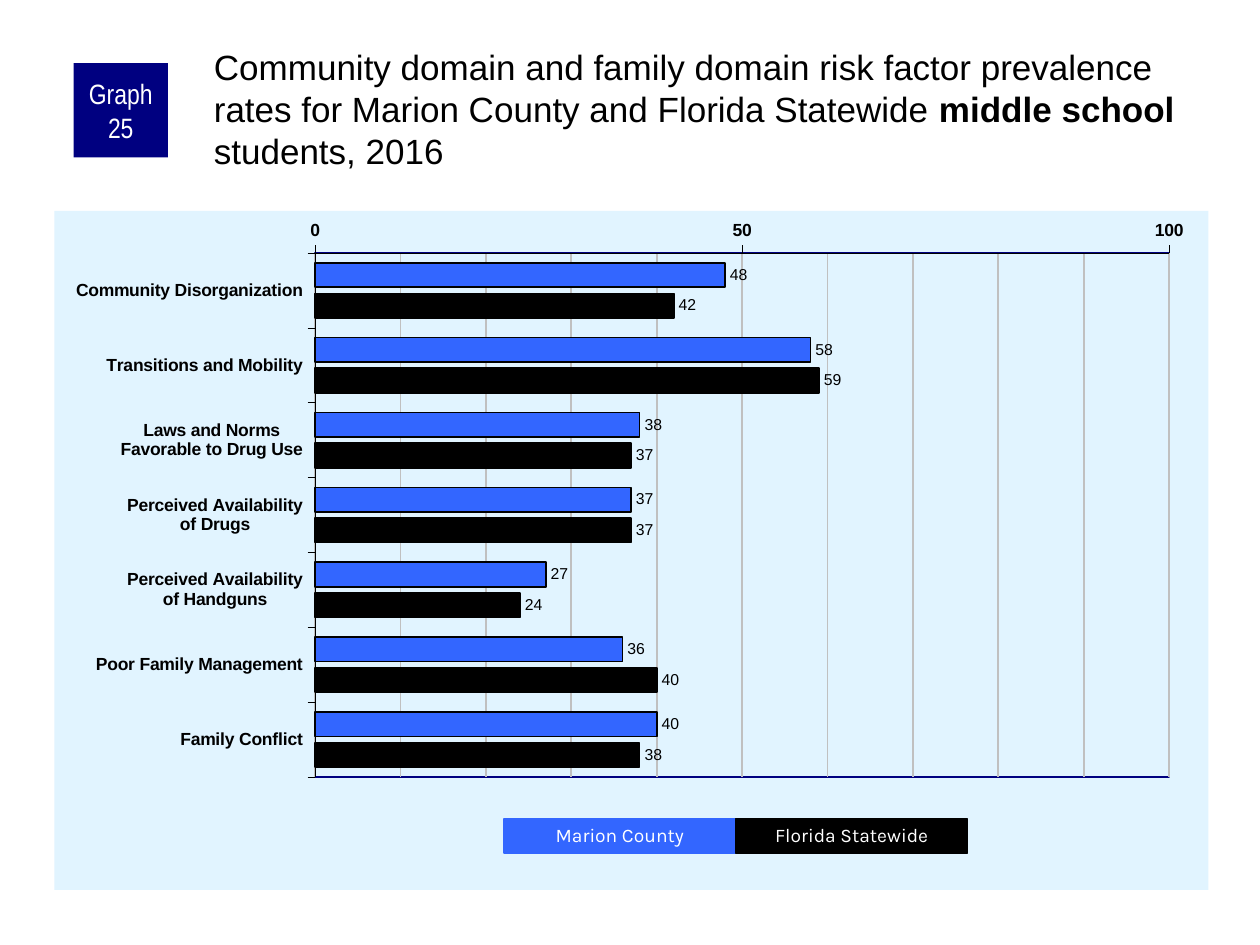
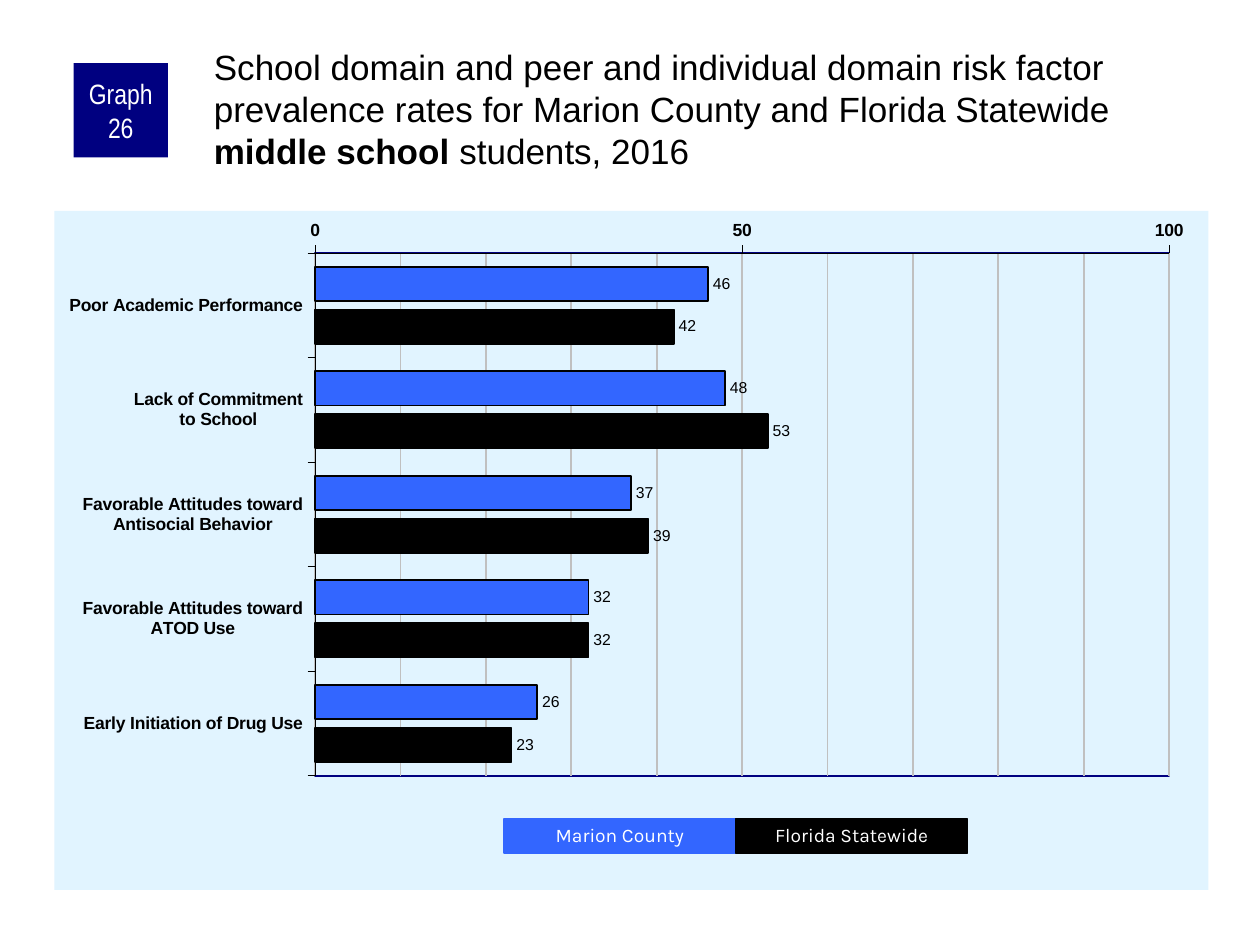
"""Build two slides of risk factor bar charts for middle school students."""
from lxml.etree import SubElement
from pptx import Presentation
from pptx.chart.data import CategoryChartData
from pptx.dml.color import RGBColor as RGB
from pptx.enum.chart import XL_AXIS_CROSSES as CROSSES
from pptx.enum.chart import XL_CHART_TYPE as CHART
from pptx.enum.chart import XL_LABEL_POSITION as LABEL
from pptx.enum.chart import XL_TICK_MARK as TICK
from pptx.enum.shapes import MSO_SHAPE as SHAPE
from pptx.enum.text import MSO_ANCHOR as ANCHOR
from pptx.enum.text import MSO_AUTO_SIZE as AUTO
from pptx.enum.text import PP_ALIGN as ALIGN
from pptx.oxml import parse_xml
from pptx.oxml.ns import nsdecls, qn
from pptx.util import Pt

COLORS = {"panel": "E1F4FF", "navy": "000080", "blue": "3366FF",
          "black": "000000", "white": "FFFFFF", "grid": "C0C0C0"}
SERIES = [("Marion County", "blue"), ("Florida Statewide", "black")]
SLIDES = [
    {"badge": "Graph 25",
     "title": "Community domain and family domain risk factor prevalence "
              "rates for Marion County and Florida Statewide ",
     "plot_height": 0.772,
     "rows": [("Community Disorganization", 48, 42),
              ("Transitions and Mobility", 58, 59),
              ("Laws and Norms\nFavorable to Drug Use", 38, 37),
              ("Perceived Availability\nof Drugs", 37, 37),
              ("Perceived Availability\nof Handguns", 27, 24),
              ("Poor Family Management", 36, 40),
              ("Family Conflict", 40, 38)]},
    {"badge": "Graph 26",
     "title": "School domain and peer and individual domain risk factor "
              "prevalence rates for Marion County and Florida Statewide ",
     "plot_height": 0.77,
     "rows": [("Poor Academic Performance", 46, 42),
              ("Lack of Commitment\nto School", 48, 53),
              ("Favorable Attitudes toward\nAntisocial Behavior", 37, 39),
              ("Favorable Attitudes toward\nATOD Use", 32, 32),
              ("Early Initiation of Drug Use", 26, 23)]},
]
TITLE_END = [("middle school", True), (" students, 2016", False)]
TITLE_BOX = (120, 24, 570, 60)
BADGE_BOX = (42, 36, 54, 54)
CHART_BOX = (31, 120.5, 659.5, 388)
LEGEND_LEFT, LEGEND_TOP, LEGEND_W, LEGEND_H = 288, 468, 132.5, 19.5


def rgb(name):
    return RGB.from_string(COLORS[name])


def assign(obj, values):
    for name, value in values.items():
        setattr(obj, name, value)


def set_font(font, size, color="black", face="Arial", bold=False):
    assign(font, {"size": Pt(size), "name": face, "bold": bold})
    font.color.rgb = rgb(color)


def set_line(line, color, width):
    line.color.rgb = rgb(color)
    line.width = Pt(width)


def add_title(s, text):
    title = s.shapes.title
    assign(title, dict(zip(("left", "top", "width", "height"),
                           map(Pt, TITLE_BOX))))
    tf = title.text_frame
    assign(tf, {"word_wrap": True, "auto_size": AUTO.NONE,
                "vertical_anchor": ANCHOR.TOP, "margin_left": Pt(2.2),
                "margin_top": Pt(2.2), "margin_right": 0, "margin_bottom": 0})
    p = tf.paragraphs[0]
    assign(p, {"alignment": ALIGN.LEFT, "line_spacing": Pt(24)})
    for part, bold in [(text, False)] + TITLE_END:
        r = p.add_run()
        r.text = part
        set_font(r.font, 20, bold=bold)


def add_label_box(s, box, text, fill, size, face, spacing=1.0):
    sp = s.shapes.add_shape(SHAPE.RECTANGLE, *map(Pt, box))
    sp.shadow.inherit = False
    sp.fill.solid()
    sp.fill.fore_color.rgb = rgb(fill)
    set_line(sp.line, fill, 0.75)
    tf = sp.text_frame
    assign(tf, {"word_wrap": True, "vertical_anchor": ANCHOR.MIDDLE,
                "margin_left": Pt(3.6), "margin_right": Pt(3.6),
                "margin_top": 0, "margin_bottom": 0})
    p = tf.paragraphs[0]
    assign(p, {"alignment": ALIGN.CENTER, "line_spacing": spacing})
    r = p.add_run()
    r.text = text
    set_font(r.font, size, "white", face)
    return sp


def area_format(fill="", line=""):
    solid = '<a:solidFill><a:srgbClr val="%s"/></a:solidFill>'
    fill_xml = solid % COLORS[fill] if fill else "<a:noFill/>"
    line_xml = solid % COLORS[line] if line else "<a:noFill/>"
    return parse_xml(f'<c:spPr {nsdecls("c", "a")}>{fill_xml}'
                     f'<a:ln w="{int(Pt(1))}">{line_xml}</a:ln></c:spPr>')


def place_plot(plot_area, x, y, w, h):
    for old in plot_area.findall(qn("c:layout")):
        plot_area.remove(old)
    layout = parse_xml(f'<c:layout {nsdecls("c")}/>')
    manual = SubElement(layout, qn("c:manualLayout"))
    for tag, val in [("layoutTarget", "inner"), ("xMode", "edge"),
                     ("yMode", "edge"), ("x", x), ("y", y),
                     ("w", w), ("h", h)]:
        SubElement(manual, qn("c:" + tag)).set("val", str(val))
    plot_area.insert(0, layout)


def add_risk_chart(s, rows, plot_height):
    labels, *columns = zip(*rows)
    data = CategoryChartData()
    data.categories = labels
    for (name, _), values in zip(SERIES, columns):
        data.add_series(name, values)
    chart = s.shapes.add_chart(CHART.BAR_CLUSTERED, *map(Pt, CHART_BOX),
                               data).chart
    assign(chart, {"has_legend": False, "has_title": False})
    set_font(chart.font, 11.8)

    plot = chart.plots[0]
    assign(plot, {"gap_width": 80, "overlap": -25, "vary_by_categories": False})
    for ser, (_, color) in zip(plot.series, SERIES):
        ser.format.fill.solid()
        ser.format.fill.fore_color.rgb = rgb(color)
        set_line(ser.format.line, "black", 1)
        dl = ser.data_labels
        assign(dl, {"show_value": True, "position": LABEL.OUTSIDE_END})
        set_font(dl.font, 9)

    cat, val = chart.category_axis, chart.value_axis
    for axis in (cat, val):
        assign(axis, {"major_tick_mark": TICK.OUTSIDE,
                      "minor_tick_mark": TICK.NONE})
        set_font(axis.tick_labels.font, 10, bold=True)
        set_line(axis.format.line, "black", 0.25)
    assign(cat, {"reverse_order": True, "crosses": CROSSES.MAXIMUM})
    assign(val, {"minimum_scale": 0, "maximum_scale": 100, "major_unit": 50,
                 "minor_unit": 10, "has_major_gridlines": True,
                 "has_minor_gridlines": True})
    set_line(val.major_gridlines.format.line, "grid", 1)

    chart_xml = chart.element.find(qn("c:chart"))
    chart_xml.addnext(area_format(fill="panel"))
    plot_area = chart_xml.find(qn("c:plotArea"))
    minor_grid = plot_area.find(qn("c:valAx")).find(qn("c:minorGridlines"))
    minor_grid.append(area_format(line="grid"))
    place_plot(plot_area, 0.226, 0.062, 0.74, plot_height)
    plot_area.append(area_format(line="navy"))


def main():
    prs = Presentation()
    prs.slide_width, prs.slide_height = Pt(720), Pt(540)
    for content in SLIDES:
        s = prs.slides.add_slide(prs.slide_layouts[5])
        add_title(s, content["title"])
        add_risk_chart(s, content["rows"], content["plot_height"])
        badge = add_label_box(s, BADGE_BOX, content["badge"], "navy", 16,
                              "Arial Narrow")
        badge.line.fill.background()
        for i, (name, color) in enumerate(SERIES):
            box = (LEGEND_LEFT + i * LEGEND_W, LEGEND_TOP, LEGEND_W, LEGEND_H)
            add_label_box(s, box, name, color, 11, "Karla", 0.9)
    prs.save("out.pptx")


if __name__ == "__main__":
    main()
